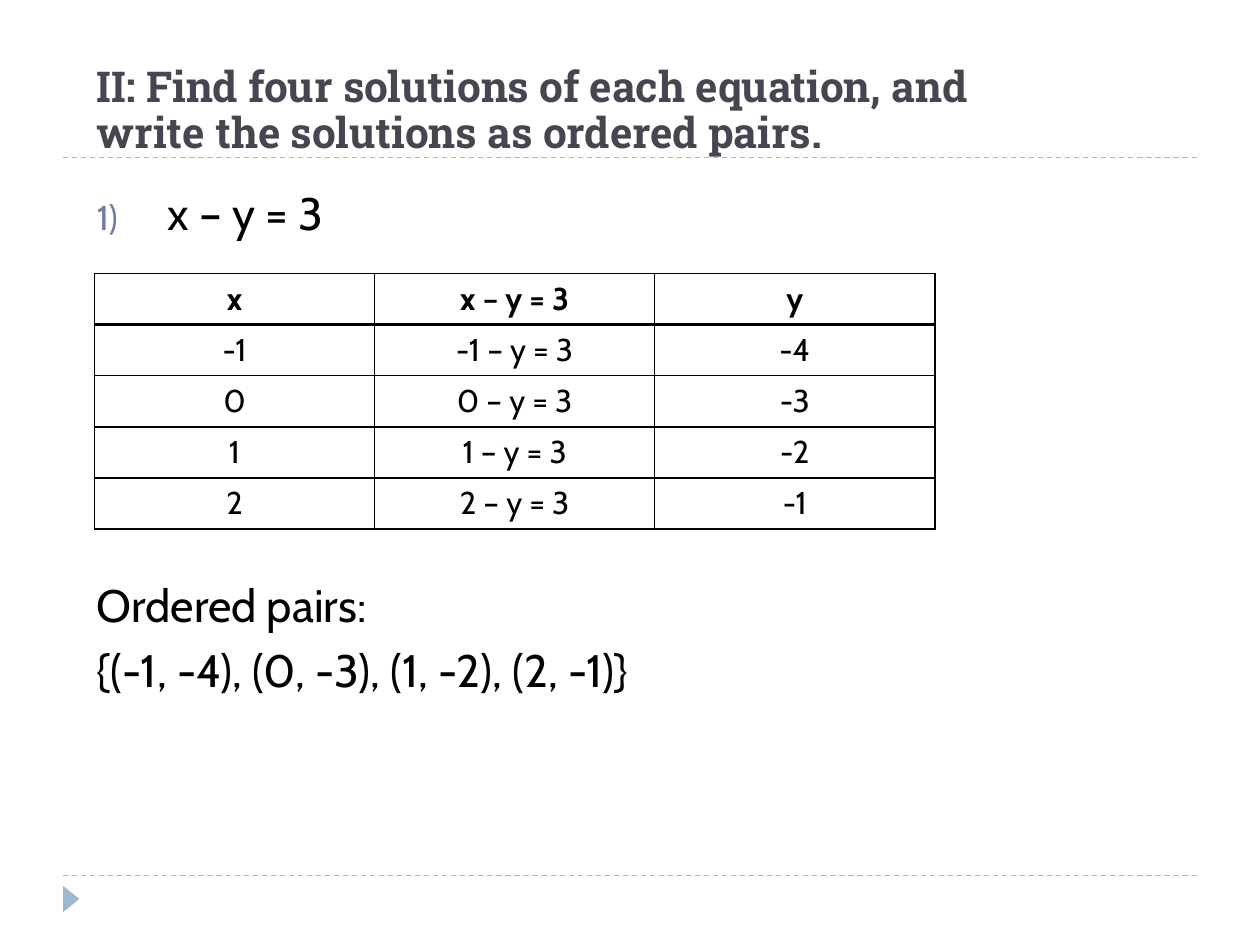
"""Builds a slide that solves x – y = 3 with a table of values and ordered pairs."""
from lxml.etree import SubElement
from pptx import Presentation
from pptx.dml.color import RGBColor
from pptx.enum.dml import MSO_LINE
from pptx.enum.shapes import MSO_CONNECTOR, MSO_SHAPE
from pptx.enum.text import MSO_ANCHOR, PP_ALIGN
from pptx.oxml import parse_xml
from pptx.oxml.ns import nsdecls, qn
from pptx.util import Inches, Pt

COLORS = {"title": "464653", "text": "000000", "accent": "9FB8CD", "number": "727CA3"}
EQUATION = "x – y = 3"

presentation = Presentation()
presentation.slide_width, presentation.slide_height = Inches(10), Inches(7.5)
slide = presentation.slides.add_slide(presentation.slide_layouts[6])
column = presentation.slide_width / 100
row = presentation.slide_height / 75


def add_run(paragraph, text, size, font="Cabin", color="text", bold=False):
    run = paragraph.add_run()
    run.text = text
    run.font.name, run.font.size, run.font.bold = font, Pt(size), bold
    run.font.color.rgb = RGBColor.from_string(COLORS[color])


def add_text_frame(left, top, width, height):
    box = slide.shapes.add_textbox(
        int(left * column), int(top * row), int(width * column), int(height * row))
    box.text_frame.word_wrap = True
    return box.text_frame


for level in (12.5, 69.5):
    y = int(level * row)
    rule = slide.shapes.add_connector(
        MSO_CONNECTOR.STRAIGHT, int(5 * column), y, int(95 * column), y)
    rule.line.color.rgb = RGBColor.from_string(COLORS["accent"])
    rule.line.width = Pt(0.75)
    rule.line.dash_style = MSO_LINE.DASH
    SubElement(rule._element.spPr, qn("a:effectLst"))

marker = slide.shapes.add_shape(
    MSO_SHAPE.ISOSCELES_TRIANGLE,
    int(4.6 * column), int(70.7 * row), int(2.1 * column), int(1.3 * row))
marker.rotation = 90
marker.shadow.inherit = False
marker.fill.solid()
marker.fill.fore_color.rgb = RGBColor.from_string(COLORS["accent"])
marker.line.fill.background()

title_frame = add_text_frame(6.7, 4, 75.1, 8.5)
title_frame.vertical_anchor = MSO_ANCHOR.BOTTOM
title_frame.margin_bottom = 0
title_paragraph = title_frame.paragraphs[0]
title_paragraph.line_spacing = 0.9
add_run(title_paragraph,
        "II: Find four solutions of each equation, and write the solutions as ordered pairs.",
        24.3, "Roboto Slab", "title", True)

problem_paragraph = add_text_frame(6.7, 14.2, 86.7, 6).paragraphs[0]
add_run(problem_paragraph, EQUATION, 26)
properties = problem_paragraph._p.get_or_add_pPr()
properties.set("marL", str(Inches(0.56)))
properties.set("indent", str(-Inches(0.56)))
number_color = SubElement(properties, qn("a:buClr"))
SubElement(number_color, qn("a:srgbClr"), val=COLORS["number"])
SubElement(properties, qn("a:buSzPct"), val="76000")
SubElement(properties, qn("a:buFont"), typeface="Cabin")
SubElement(properties, qn("a:buAutoNum"), type="arabicParenR")

solutions = [(x, x - 3) for x in range(-1, 3)]
table_rows = [("x", EQUATION, "y")]
table_rows += [(str(x), f"{x} – y = 3", str(y)) for x, y in solutions]
table = slide.shapes.add_table(
    len(table_rows), 3, int(7.5 * column), int(21.7 * row),
    int(66.7 * column), int(20.3 * row)).table
table.first_row = table.horz_banding = False
for row_index, values in enumerate(table_rows):
    for column_index, value in enumerate(values):
        cell = table.cell(row_index, column_index)
        paragraph = cell.text_frame.paragraphs[0]
        paragraph.alignment = PP_ALIGN.CENTER
        add_run(paragraph, value, 18, bold=row_index == 0)
        for side in "LRTB":
            heavy = (row_index, side) in ((0, "B"), (1, "T"))
            cell._tc.get_or_add_tcPr().append(parse_xml(
                f'<a:ln{side} {nsdecls("a")} w="{Pt(2 if heavy else 1)}"><a:solidFill>'
                f'<a:srgbClr val="{COLORS["text"]}"/></a:solidFill></a:ln{side}>'))
        cell.fill.background()

answer_frame = add_text_frame(6.7, 45.3, 86.7, 11)
pairs = ", ".join(f"({x}, {y})" for x, y in solutions)
add_run(answer_frame.paragraphs[0], "Ordered pairs:", 26)
pairs_paragraph = answer_frame.add_paragraph()
pairs_paragraph.space_before = Pt(6)
add_run(pairs_paragraph, "{" + pairs + "}", 26)

presentation.save("out.pptx")
